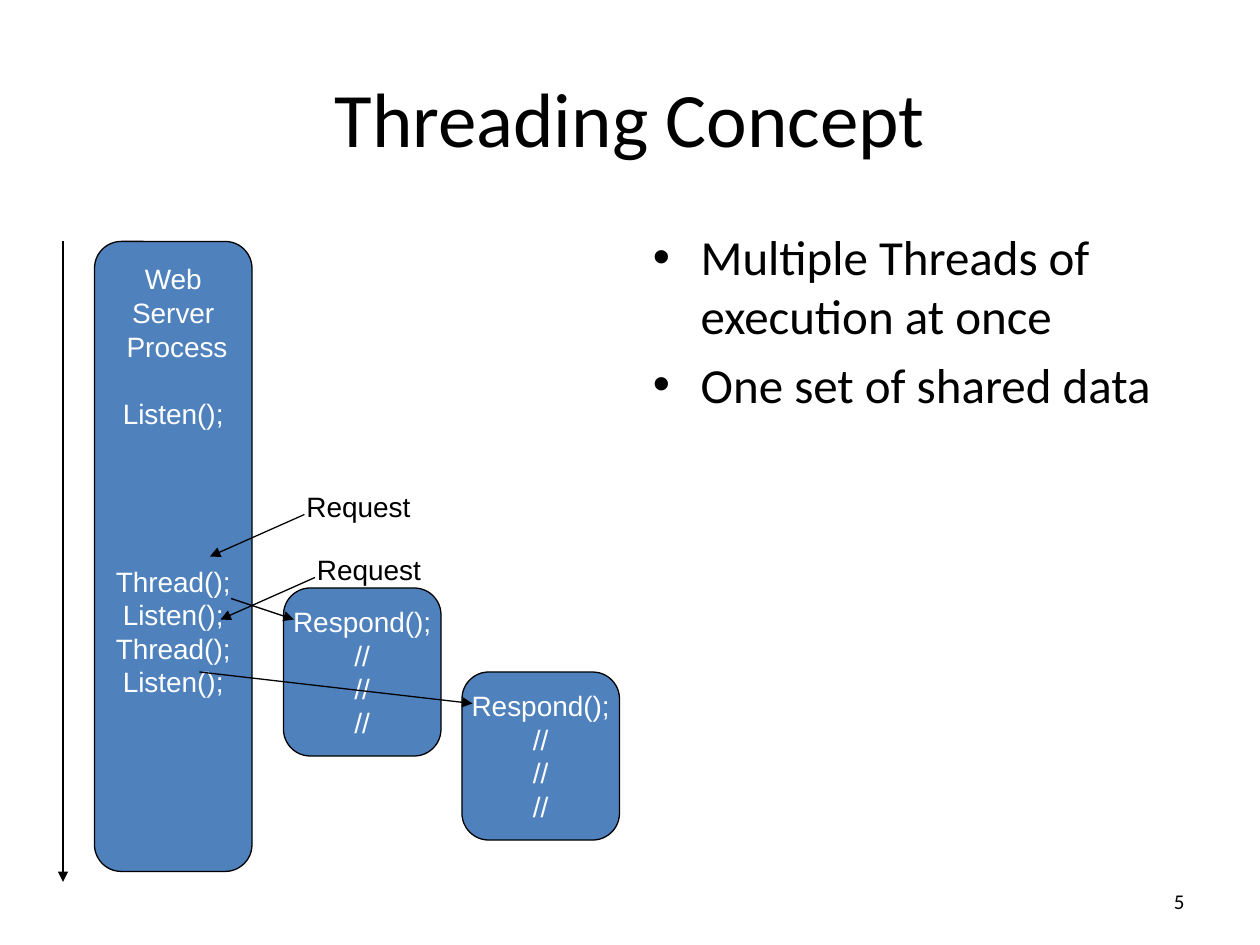
"""Build the Threading Concept slide: a server process spawning two responders."""
from dataclasses import dataclass
from lxml.etree import SubElement
from pptx import Presentation
from pptx.dml.color import RGBColor as RGB
from pptx.enum.shapes import MSO_CONNECTOR as Line, MSO_SHAPE as Preset
from pptx.enum.text import MSO_ANCHOR as Anchor, PP_ALIGN as Align
from pptx.oxml.ns import qn
from pptx.util import Inches, Pt


@dataclass(frozen=True)
class Theme:
    ink: RGB = RGB(0, 0, 0)
    light: RGB = RGB(255, 255, 255)
    block: RGB = RGB(0x4F, 0x81, 0xBD)
    heading_font: str = "Calibri"
    diagram_font: str = "Arial"
    title: int = 44
    body: int = 28
    code: int = 16
    number: int = 12
    code_line: float = 19.2
    outline: float = 0.75


theme = Theme()
deck = Presentation()
deck.slide_width, deck.slide_height = Inches(10), Inches(7.5)
slide = deck.slides.add_slide(deck.slide_layouts[6])
COLS, ROWS = 120, 90
col, row = deck.slide_width / COLS, deck.slide_height / ROWS


def write(holder, lines, *, size, font=theme.heading_font, color=theme.ink, align=Align.LEFT,
          anchor=Anchor.TOP, wrap=True, gaps=None, spacing=None, bullet=None, indent=0.38):
    frame = holder.text_frame
    frame.word_wrap, frame.vertical_anchor = wrap, anchor
    for index, line in enumerate(lines):
        paragraph = frame.paragraphs[0] if index == 0 else frame.add_paragraph()
        paragraph.alignment = align
        if spacing:
            paragraph.line_spacing = Pt(spacing)
        if gaps and index in gaps:
            paragraph.space_before = Pt(gaps[index])
        if bullet:
            properties = paragraph._p.get_or_add_pPr()
            properties.set("marL", str(Inches(indent)))
            properties.set("indent", str(-Inches(indent)))
            SubElement(properties, qn("a:buFont"), typeface="Arial")
            SubElement(properties, qn("a:buChar"), char=bullet)
        run = paragraph.add_run()
        run.text = line
        run.font.size, run.font.name = Pt(size), font
        run.font.color.rgb = color


def area(left, top, width, height):
    return round(left * col), round(top * row), round(width * col), round(height * row)


write(slide.shapes.add_textbox(*area(86, 83.4, 28, 4.8)), ["5"],
      size=theme.number, align=Align.RIGHT, anchor=Anchor.MIDDLE)
write(slide.shapes.add_textbox(*area(6, 3.6, 108, 15)), ["Threading Concept"],
      size=theme.title, align=Align.CENTER, anchor=Anchor.MIDDLE)
write(slide.shapes.add_textbox(*area(61, 21, 53, 59.4)),
      ["Multiple Threads of execution at once", "One set of shared data"],
      size=theme.body, bullet="•", gaps={1: theme.body * 0.2})

server_lines = ["Web", "Server", " Process", "Listen();"] + ["Thread();", "Listen();"] * 2
server_gaps = {3: theme.code_line, 4: 4 * theme.code_line}
respond_lines = ["Respond();"] + ["//"] * 3
processes = [
    (9, 23, 60, server_lines, server_gaps, Anchor.TOP),
    (27, 56, 16, respond_lines, None, Anchor.MIDDLE),
    (44, 64, 16, respond_lines, None, Anchor.MIDDLE),
]
for left, top, height, lines, gaps, anchor in processes:
    process = slide.shapes.add_shape(Preset.ROUNDED_RECTANGLE, *area(left, top, 15, height))
    process.shadow.inherit = False
    process.adjustments[0] = 0.17
    process.fill.solid()
    process.fill.fore_color.rgb = theme.block
    process.line.color.rgb, process.line.width = theme.ink, Pt(theme.outline)
    process.text_frame.margin_top = process.text_frame.margin_bottom = Inches(0.1)
    write(process, lines, size=theme.code, font=theme.diagram_font, color=theme.light,
          align=Align.CENTER, anchor=anchor, wrap=False, gaps=gaps, spacing=theme.code_line)

for left, top in [(28, 46), (29, 52)]:
    write(slide.shapes.add_textbox(*area(left, top, 14, 4.4)), ["Request"],
          size=theme.code, font=theme.diagram_font, spacing=theme.code_line)

time_axis = (6, 23, 6, 84)
requests = [(29, 49, 20, 53), (30, 55, 21, 59)]
spawns = [(22, 57, 28, 59), (19, 64, 45, 67)]
for x1, y1, x2, y2 in [time_axis, *requests, *spawns]:
    start, end = area(x1, y1, 0, 0)[:2], area(x2, y2, 0, 0)[:2]
    arrow = slide.shapes.add_connector(Line.STRAIGHT, *start, *end)
    arrow.line.color.rgb, arrow.line.width = theme.ink, Pt(theme.outline)
    SubElement(arrow.line._get_or_add_ln(), qn("a:tailEnd"), type="triangle")
    SubElement(arrow._element.spPr, qn("a:effectLst"))

deck.save("out.pptx")
